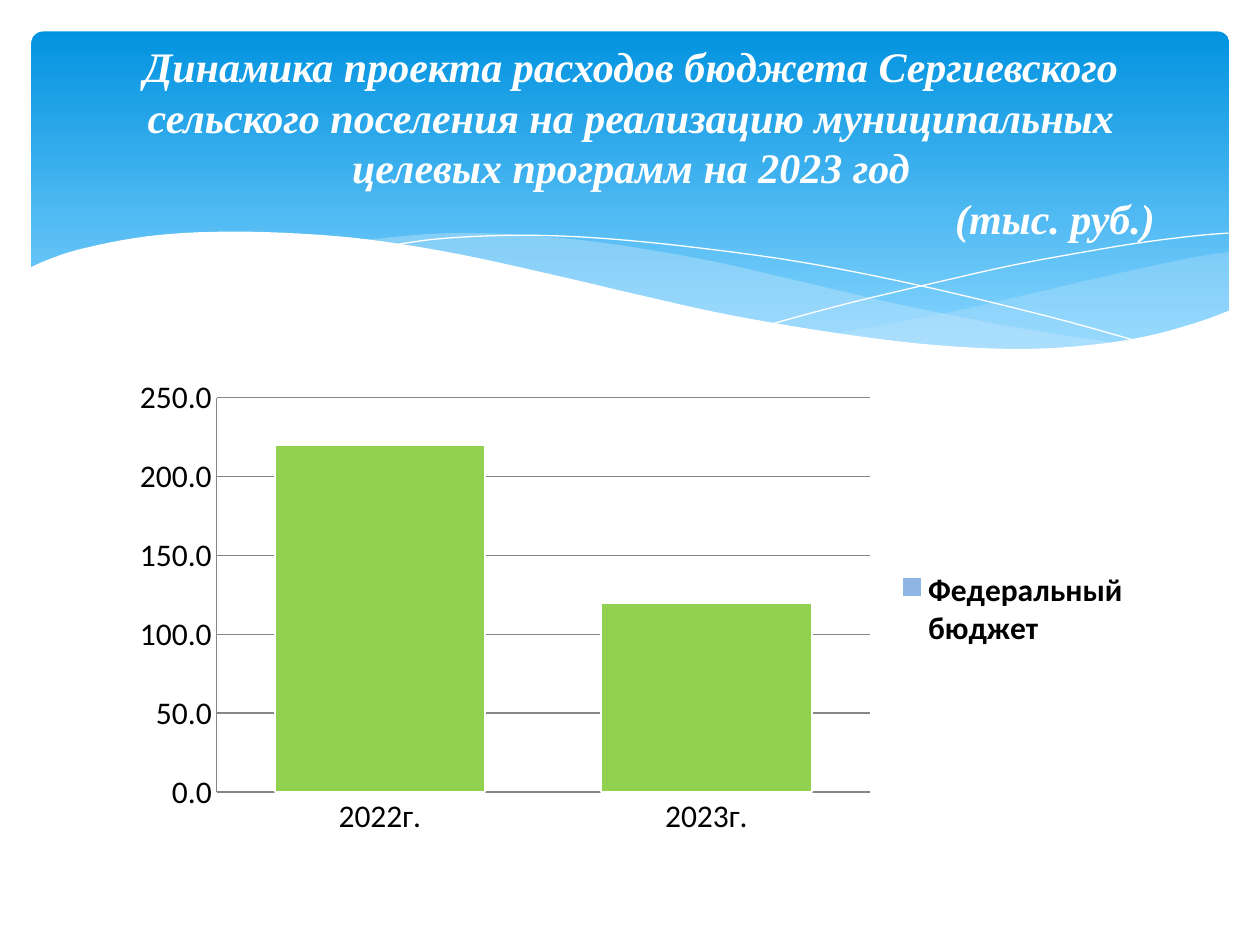
import lxml.etree
import pptx
import pptx.chart.data
import pptx.dml.color
import pptx.enum.chart
import pptx.enum.shapes
import pptx.enum.text
import pptx.oxml.ns
import pptx.oxml.xmlchemy
import pptx.util

Pt = pptx.util.Pt
qn = pptx.oxml.ns.qn

RIGHT_WAVE = [
    [(476, 190.8), (542, 178.6), (620, 160.6), (652, 153.4), (682.5, 147), (702.5, 144)],
    [(702.5, 177.8), (683, 185), (663, 190.8), (634, 196.5), (601, 199.5), (570, 199.5),
     (536.5, 198), (507.5, 195), (476, 190.8)],
]
MIDDLE_WAVE = [
    [(206, 137.5), (246, 143.3), (291, 152), (323.5, 159.8), (381.5, 172.8), (432.5, 183.6),
     (479, 191.5), (520, 197.3), (556.5, 199.6), (596, 200.2), (643, 196.6)],
    [(643, 196.6), (602.5, 190.8), (558, 182.9), (508.5, 172.8), (453, 159.8), (409.5, 149.8),
     (370, 142.6), (335, 137.5), (302.5, 134.6), (273.5, 133.2), (247.5, 133.6),
     (225.5, 135.4), (206, 137.5)],
]
FALLING_LINE = [
    [(222.5, 140.4), (247.5, 136.8), (278.5, 134.8), (312, 134.6), (352, 136.8),
     (400.5, 141.8), (458, 149.8), (523.5, 162.7), (598.5, 180.7), (653, 195.8)],
]
RISING_LINE = [
    [(441.5, 185), (484, 173.5), (538.5, 160.6), (580.5, 151.2), (623.5, 143.3),
     (655, 138.2), (684.5, 134.6), (702, 133.2)],
]
WHITE_WAVE = [
    [(703.5, 177.1), (684, 184.3), (655, 192.2), (621.5, 197.3), (582.5, 199.4),
     (535.5, 197.3), (481, 190.8), (417, 180), (362, 167.8), (322, 158.4), (263, 145.4),
     (210, 136.8), (165.5, 133.2), (127.5, 132.4), (95, 133.9), (68.5, 137.5),
     (42.5, 143.3), (26, 149), (16.5, 153.4)],
    [(16.5, 236.9), (703.5, 236.9)],
]


def color(value):
    return pptx.dml.color.RGBColor.from_string(value)


def smooth(points, steps=5):
    padded = [points[0], *points, points[-1]]
    result = [points[0]]
    for a, b, c, d in zip(padded, padded[1:], padded[2:], padded[3:]):
        for step in range(1, steps + 1):
            t = step / steps
            result.append(tuple(
                q + t * ((r - p) + t * ((2 * p - 5 * q + 4 * r - s) + t * (3 * q - p - 3 * r + s))) / 2
                for p, q, r, s in zip(a, b, c, d)))
    return result


def place(element, x, y, width, height, inner=False):
    for old in element.findall(qn("c:layout")):
        element.remove(old)
    layout = pptx.oxml.xmlchemy.OxmlElement("c:layout")
    manual = lxml.etree.SubElement(layout, qn("c:manualLayout"))
    settings = {"layoutTarget": "inner"} if inner else {}
    settings.update(xMode="edge", yMode="edge", x=x, y=y, w=width, h=height)
    for name, value in settings.items():
        lxml.etree.SubElement(manual, qn("c:" + name)).set("val", str(value))
    return layout


class Slide:
    """Holds the style and the current page, and draws each kind of element."""

    title_font = "Times New Roman"
    chart_font = "Calibri"
    white = "FFFFFF"
    grid = "868686"

    def __init__(self, deck):
        self.page = deck.slides.add_slide(deck.slide_layouts[6])

    def banner(self, left, top, width, height, start, end):
        shape = self.page.shapes.add_shape(
            pptx.enum.shapes.MSO_SHAPE.ROUNDED_RECTANGLE, Pt(left), Pt(top), Pt(width), Pt(height))
        shape.adjustments[0] = 0.034
        shape.shadow.inherit = False
        shape.line.fill.background()
        shape.fill.gradient()
        shape.fill.gradient_angle = 270
        for stop, tone, position in zip(shape.fill.gradient_stops, (start, end), (0, 0.9)):
            stop.color.rgb = color(tone)
            stop.position = position

    def wave(self, curves, fill=None, opacity=100):
        points = [(Pt(x), Pt(y)) for curve in curves
                  for x, y in (smooth(curve) if len(curve) > 2 else curve)]
        builder = self.page.shapes.build_freeform(*points[0], scale=1.0)
        builder.add_line_segments(points[1:], close=fill is not None)
        shape = builder.convert_to_shape()
        shape.shadow.inherit = False
        if fill is None:
            shape.fill.background()
            shape.line.color.rgb = color(self.white)
            shape.line.width = Pt(0)
            return
        shape.line.fill.background()
        shape.fill.solid()
        shape.fill.fore_color.rgb = color(fill)
        if opacity < 100:
            tone = shape.fill._xPr.find(".//" + qn("a:srgbClr"))
            lxml.etree.SubElement(tone, qn("a:alpha")).set("val", str(opacity * 1000))

    def title(self, left, top, width, height, heading, unit):
        box = self.page.shapes.add_textbox(Pt(left), Pt(top), Pt(width), Pt(height))
        frame = box.text_frame
        frame.word_wrap = True
        frame.vertical_anchor = pptx.enum.text.MSO_ANCHOR.MIDDLE
        frame.margin_left = frame.margin_right = Pt(24.5)
        frame.text = heading + "\n" + unit
        align = pptx.enum.text.PP_ALIGN
        for para, side in zip(frame.paragraphs, (align.CENTER, align.RIGHT)):
            para.alignment = side
            for span in para.runs:
                span.font.name = self.title_font
                span.font.size = Pt(24)
                span.font.bold = span.font.italic = True
                span.font.color.rgb = color(self.white)

    def stacked_columns(self, left, top, width, height, categories, series):
        kinds = pptx.enum.chart
        data = pptx.chart.data.CategoryChartData(number_format="#,##0.0")
        data.categories = categories
        for name, values, _ in series:
            data.add_series(name, values)
        chart = self.page.shapes.add_chart(
            kinds.XL_CHART_TYPE.COLUMN_STACKED, Pt(left), Pt(top), Pt(width), Pt(height), data).chart
        chart.has_title = False
        chart.font.name = self.chart_font
        chart.font.size = Pt(18)
        chart.font.color.rgb = color("000000")

        plot = chart.plots[0]
        plot.gap_width = 55
        plot.overlap = 100
        plot.vary_by_categories = False
        for item, (_, _, fill) in zip(plot.series, series):
            item.format.fill.solid()
            item.format.fill.fore_color.rgb = color(fill)
            item.format.line.color.rgb = color(self.white)
            item.format.line.width = Pt(1)

        for axis in (chart.category_axis, chart.value_axis):
            axis.major_tick_mark = axis.minor_tick_mark = kinds.XL_TICK_MARK.NONE
            axis.format.line.color.rgb = color(self.grid)
        axis = chart.value_axis
        axis.minimum_scale, axis.maximum_scale, axis.major_unit = 0, 250, 50
        axis.tick_labels.number_format = "#,##0.0"
        axis.tick_labels.number_format_is_linked = False
        axis.major_gridlines.format.line.color.rgb = color(self.grid)

        chart.has_legend = True
        legend = chart.legend
        legend.position = kinds.XL_LEGEND_POSITION.RIGHT
        legend.include_in_layout = False
        legend.font.bold = True
        legend.font.size = Pt(18)
        position = legend._element.find(qn("c:legendPos"))
        position.addnext(place(legend._element, 0.76, 0.42, 0.23, 0.17))
        for index in (1, 0):
            entry = pptx.oxml.xmlchemy.OxmlElement("c:legendEntry")
            lxml.etree.SubElement(entry, qn("c:idx")).set("val", str(index))
            lxml.etree.SubElement(entry, qn("c:delete")).set("val", "1")
            position.addnext(entry)
        area = chart._chartSpace.find(".//" + qn("c:plotArea"))
        area.insert(0, place(area, 0.095, 0.06, 0.64, 0.83, inner=True))


def main():
    deck = pptx.Presentation()
    deck.slide_width, deck.slide_height = Pt(720), Pt(540)
    slide = Slide(deck)
    slide.banner(18, 18, 684.5, 194.5, "0293E0", "83D3FE")
    slide.wave(RIGHT_WAVE, "C6E7FC", 29)
    slide.wave(MIDDLE_WAVE, "C6E7FC", 40)
    slide.wave(FALLING_LINE)
    slide.wave(RISING_LINE)
    slide.wave(WHITE_WAVE, "FFFFFF")
    slide.stacked_columns(68.5, 211, 583, 271.5, ["2022г.", "2023г."], [
        ("Series 1", (220, 120), "92D050"),
        ("Series 2", (0, 0), "00B0F0"),
        ("Федеральный бюджет", (0, 0), "8FB5E5"),
    ])
    slide.title(
        36.5, 26, 648, 110,
        "Динамика проекта расходов бюджета Сергиевского сельского поселения "
        "на реализацию муниципальных целевых программ на 2023 год",
        "(тыс. руб.)")
    deck.save("out.pptx")


if __name__ == "__main__":
    main()
